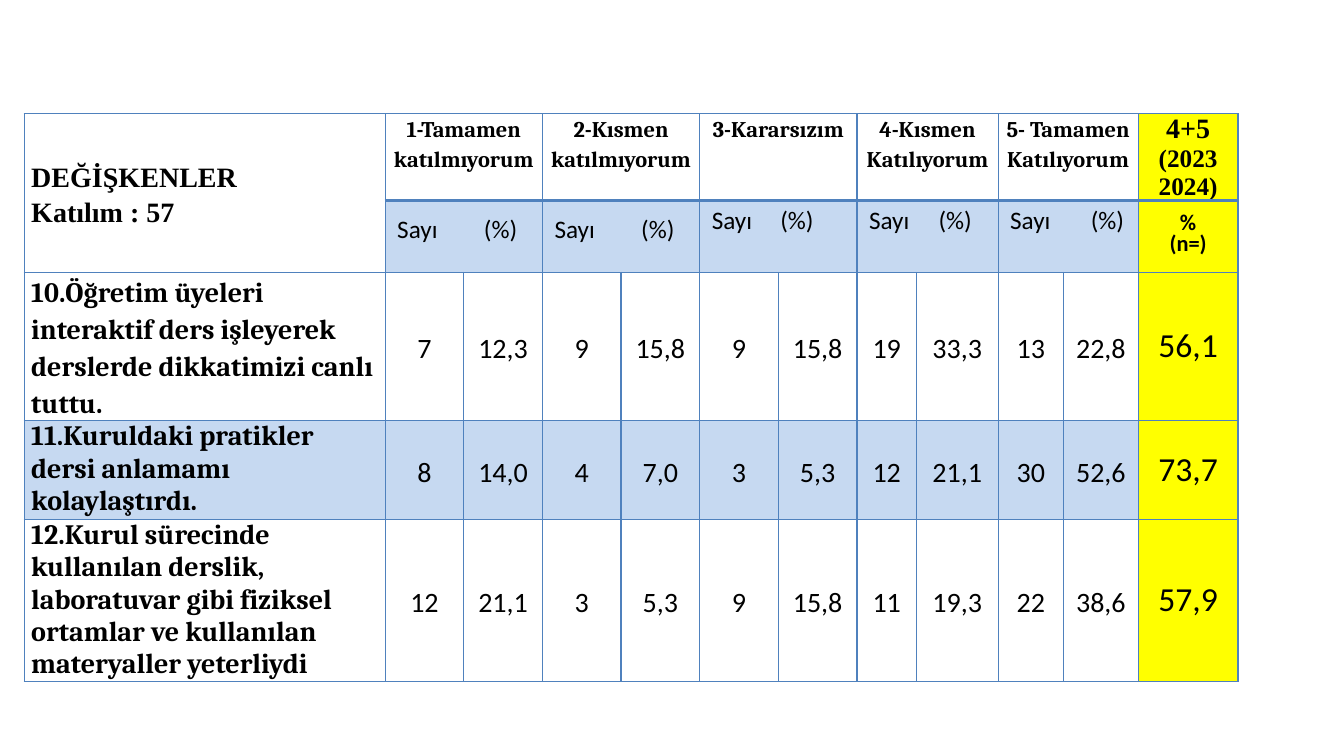
from dataclasses import dataclass

from lxml.etree import SubElement
from pptx import Presentation
from pptx.dml.color import RGBColor as Color
from pptx.enum.text import MSO_ANCHOR as Anchor, PP_ALIGN as Align
from pptx.oxml.ns import qn
from pptx.util import Inches, Pt


@dataclass(frozen=True)
class Theme:
    """Colours, fonts and type sizes of the survey slide."""
    ink: str = "000000"
    plain: str = "FFFFFF"
    band: str = "C6D9F1"
    accent: str = "FFFF00"
    border: str = "4F81BD"
    thin: float = 1
    thick: float = 2.25
    body: str = "Calibri"
    label: str = "Cambria"
    heading: str = "Times New Roman"
    small: int = 16
    medium: int = 18
    large: int = 20
    total: int = 24


THEME = Theme()
COLUMNS = [3.58] + [0.78] * 6 + [0.59, 0.81, 0.65, 0.74, 0.99]
ROWS = [0.86, 0.71, 1.47, 0.98, 1.61]
BOX = (0.24, 1.13, sum(COLUMNS), sum(ROWS))
TOTAL_COLUMN = len(COLUMNS) - 1
ANSWERS = [
    ("1-Tamamen katılmıyorum", 0.86, 0),
    ("2-Kısmen katılmıyorum", 0.86, 0),
    ("3-Kararsızım", 0.68, 0.18),
    ("4-Kısmen Katılıyorum", 0.69, 0.18),
    ("5- Tamamen Katılıyorum", 0.8, 0.18),
]
QUESTIONS = [
    ("10.Öğretim üyeleri interaktif ders işleyerek derslerde dikkatimizi canlı tuttu.", 1.15,
     ["7", "12,3", "9", "15,8", "9", "15,8", "19", "33,3", "13", "22,8"], "56,1"),
    ("11.Kuruldaki pratikler dersi anlamamı kolaylaştırdı.", 1.0,
     ["8", "14,0", "4", "7,0", "3", "5,3", "12", "21,1", "30", "52,6"], "73,7"),
    ("12.Kurul sürecinde kullanılan derslik, laboratuvar gibi fiziksel ortamlar ve "
     "kullanılan materyaller yeterliydi", 1.0,
     ["12", "21,1", "3", "5,3", "9", "15,8", "11", "19,3", "22", "38,6"], "57,9"),
]


def write(cell, lines, font, bold=False, align=Align.CENTER, spacing=1.0, anchor=Anchor.MIDDLE):
    """Fill a cell with (text, size) lines in one font."""
    cell.vertical_anchor = anchor
    cell.margin_left = cell.margin_right = Inches(0.07)
    cell.margin_top = cell.margin_bottom = 0
    frame = cell.text_frame
    for index, (text, size) in enumerate(lines):
        para = frame.add_paragraph() if index else frame.paragraphs[0]
        para.alignment = align
        para.line_spacing = spacing
        span = para.add_run()
        span.text = text
        span.font.name = font
        span.font.size = Pt(size)
        span.font.bold = bold
        span.font.color.rgb = Color.from_string(THEME.ink)


def paint(cell, fill, top, bottom):
    """Give a cell its fill and its four borders."""
    cell.fill.solid()
    cell.fill.fore_color.rgb = Color.from_string(fill)
    props = cell._tc.get_or_add_tcPr()
    widths = {"L": THEME.thin, "R": THEME.thin, "T": top, "B": bottom}
    for index, (side, width) in enumerate(widths.items()):
        line = SubElement(props, qn(f"a:ln{side}"), w=str(Pt(width)))
        solid = SubElement(line, qn("a:solidFill"))
        SubElement(solid, qn("a:srgbClr"), val=THEME.border)
        props.insert(index, line)


def add_grid(page, box):
    """Place the empty ruled table in the given box."""
    table = page.shapes.add_table(len(ROWS), len(COLUMNS), *map(Inches, box)).table
    table.first_row = table.horz_banding = False
    for column, width in zip(table.columns, COLUMNS):
        column.width = Inches(width)
    for row, height in zip(table.rows, ROWS):
        row.height = Inches(height)
    for r in range(len(ROWS)):
        for c in range(len(COLUMNS)):
            banded = r == 3 or (r == 1 and c > 0)
            fill = THEME.accent if c == TOTAL_COLUMN else THEME.band if banded else THEME.plain
            top = THEME.thick if r == 1 and c else THEME.thin
            bottom = THEME.thick if r == 0 and c else THEME.thin
            paint(table.cell(r, c), fill, top, bottom)
    return table


def fill_header(table):
    """Write the two heading rows and merge their cells."""
    corner = table.cell(0, 0)
    corner.merge(table.cell(1, 0))
    write(corner, [("DEĞİŞKENLER", THEME.large), ("Katılım : 57", THEME.large)],
          THEME.heading, True, Align.LEFT, 1.15)
    for index, (answer, tab, lift) in enumerate(ANSWERS):
        left = 1 + 2 * index
        for r in range(2):
            table.cell(r, left).merge(table.cell(r, left + 1))
        write(table.cell(0, left), [(answer, THEME.small)], THEME.label, True,
              spacing=1.15, anchor=Anchor.TOP)
        units = table.cell(1, left)
        write(units, [("Sayı\t(%)", THEME.medium)], THEME.body, align=Align.LEFT, spacing=Pt(13))
        units.margin_left = Inches(0.12)
        units.margin_bottom = Inches(lift)
        props = units.text_frame.paragraphs[0]._p.get_or_add_pPr()
        stops = SubElement(props, qn("a:tabLst"))
        SubElement(stops, qn("a:tab"), pos=str(Inches(tab)), algn="l")
    write(table.cell(0, TOTAL_COLUMN), [("4+5", THEME.large), ("(2023 2024)", THEME.medium)],
          THEME.heading, True, anchor=Anchor.TOP)
    write(table.cell(1, TOTAL_COLUMN), [("%", THEME.small), ("(n=)", THEME.small)],
          THEME.body, True, spacing=Pt(15))


def fill_questions(table):
    """Write one row for each survey question."""
    for r, (question, spacing, values, total) in enumerate(QUESTIONS, start=2):
        write(table.cell(r, 0), [(question, THEME.large)], THEME.label, True,
              Align.LEFT, spacing, Anchor.TOP)
        for c, value in enumerate(values, start=1):
            write(table.cell(r, c), [(value, THEME.large)], THEME.body, spacing=1.15)
        write(table.cell(r, TOTAL_COLUMN), [(total, THEME.total)], THEME.body)


def main():
    """Build and save the survey slide."""
    deck = Presentation()
    deck.slide_width, deck.slide_height = Inches(13.33), Inches(7.5)
    page = deck.slides.add_slide(deck.slide_layouts[6])
    table = add_grid(page, BOX)
    fill_header(table)
    fill_questions(table)
    deck.save("out.pptx")


if __name__ == "__main__":
    main()
